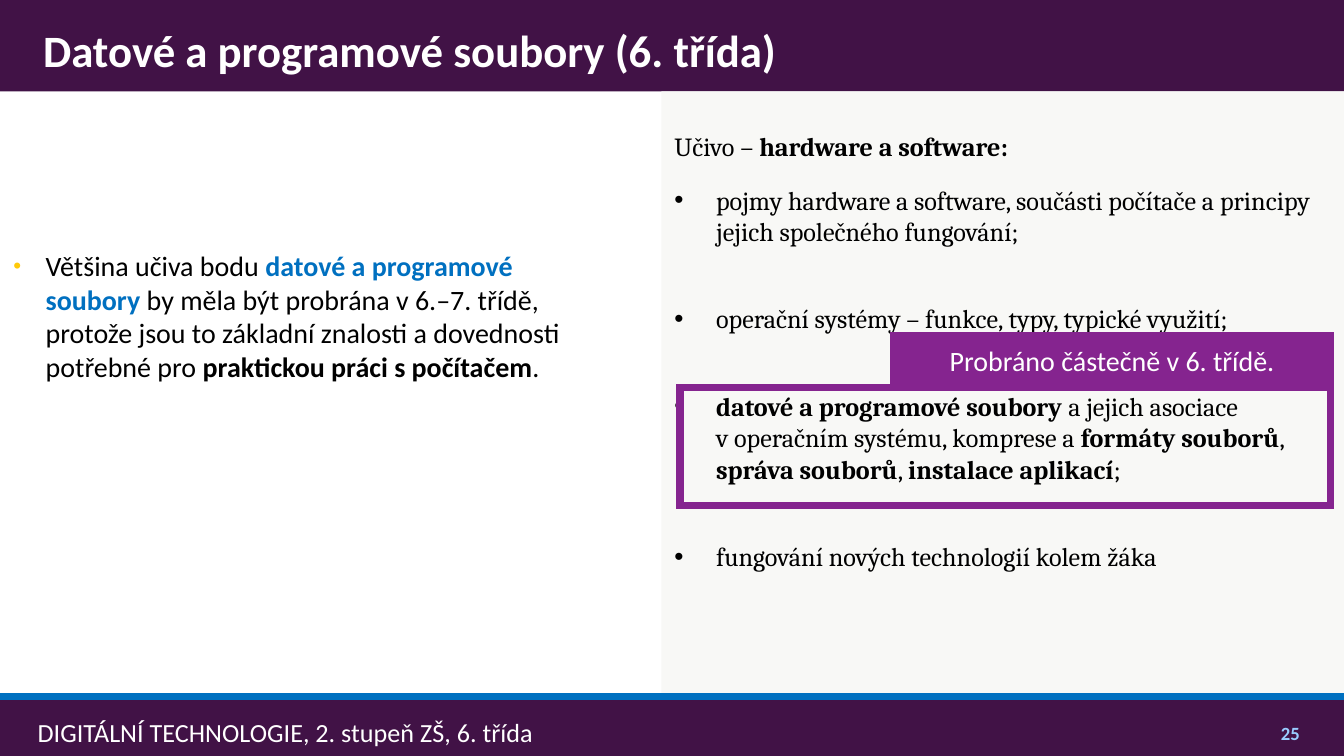
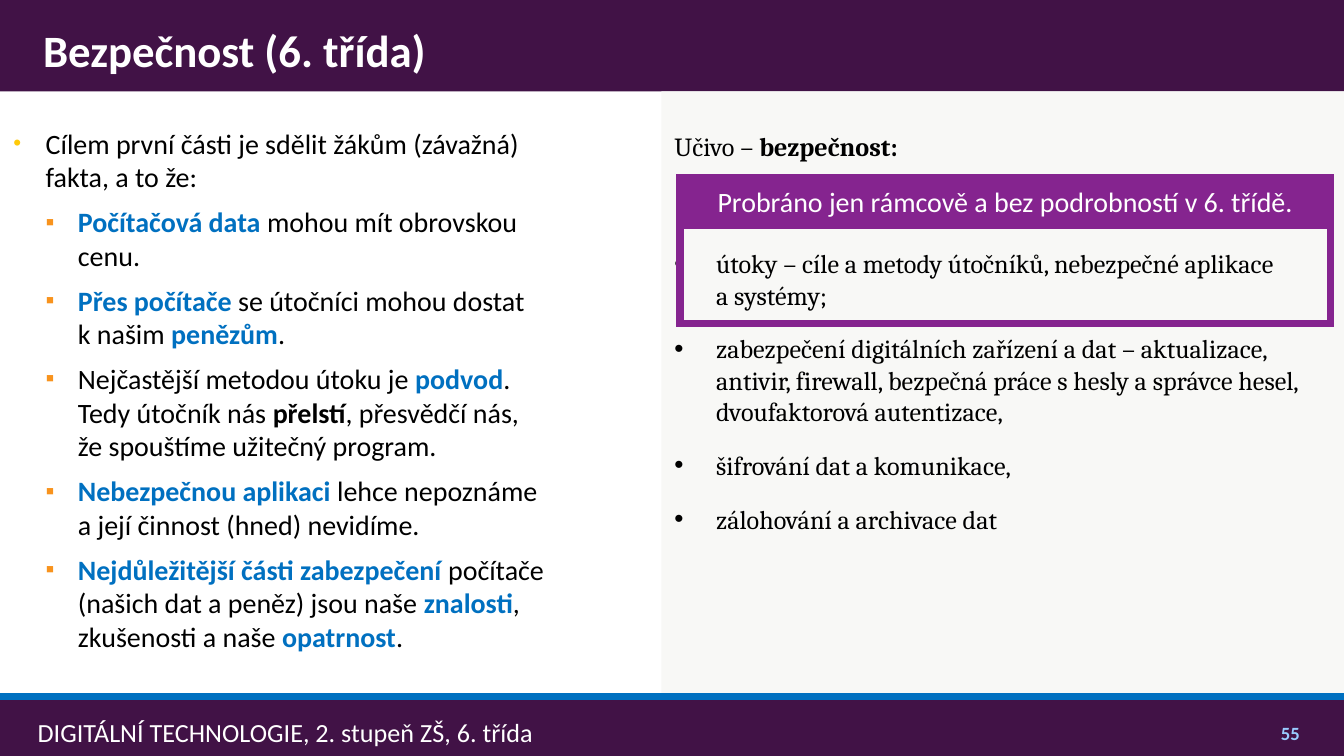
"""Build two lesson slides on files and security for 6th-grade digital technology."""
from lxml import etree
from pptx import Presentation
from pptx.dml.color import RGBColor
from pptx.enum import shapes, text
from pptx.oxml import ns
from pptx.util import Inches, Pt

COLORS = {
    "band": "411246", "panel": "F8F8F6", "accent": "85248F", "rule": "0070C0",
    "white": "FFFFFF", "black": "000000", "number": "99CCFF",
    "bullet": "FFCA08", "subbullet": "F8931D",
}
STYLES = {"plain": ("black", False), "bold": ("black", True), "key": ("rule", True)}
FOOTER = "DIGITÁLNÍ TECHNOLOGIE, 2. stupeň ZŠ, 6. třída"
LEVELS = [("•", "bullet", 80, 0.24), ("▪", "subbullet", 90, 0.48)]
TIE, HARD_SPACE = "~", chr(160)

SLIDES = [
    {
        "title": "Datové a programové soubory (6. třída)",
        "number": "25",
        "body_box": (0.04, 1.75, 4.49, 3.34),
        "body": [
            (0, [("Většina učiva bodu ", "plain"),
                 ("datové a programové soubory ", "key"),
                 ("by měla být probrána v 6.–7. třídě, protože jsou to základní "
                  "znalosti a dovednosti potřebné pro ", "plain"),
                 ("praktickou práci s~počítačem", "bold"), (".", "plain")]),
        ],
        "topic": "hardware a software:",
        "curriculum": [
            (12, [("pojmy hardware a software, součásti počítače a principy "
                   "jejich společného fungování;", "plain")]),
            (30, [("operační systémy – funkce, typy, typické využití;", "plain")]),
            (30, [("datové a programové soubory ", "bold"),
                  ("a jejich asociace v~operačním systému, komprese a ", "plain"),
                  ("formáty souborů", "bold"), (", ", "plain"),
                  ("správa souborů", "bold"), (", ", "plain"),
                  ("instalace aplikací", "bold"), (";", "plain")]),
            (30, [("fungování nových technologií kolem žáka", "plain")]),
        ],
        "frame": (2.88, 0.88),
        "label": ("Probráno částečně v 6. třídě.", 2.5, 3.25),
    },
    {
        "title": "Bezpečnost (6. třída)",
        "number": "55",
        "body_box": (0.04, 0.84, 4.25, 4.25),
        "body": [
            (0, [("Cílem první části je sdělit žákům (závažná) fakta, a to že:", "plain")]),
            (1, [("Počítačová data", "key"), (" mohou mít obrovskou cenu.", "plain")]),
            (1, [("Přes počítače ", "key"),
                 ("se útočníci mohou dostat k~našim ", "plain"),
                 ("penězům", "key"), (".", "plain")]),
            (1, [("Nejčastější metodou útoku je ", "plain"), ("podvod", "key"),
                 (". Tedy útočník nás ", "plain"), ("přelstí", "bold"),
                 (", přesvědčí nás, že~spouštíme užitečný program.", "plain")]),
            (1, [("Nebezpečnou aplikaci ", "key"),
                 ("lehce nepoznáme a~její činnost (hned) nevidíme.", "plain")]),
            (1, [("Nejdůležitější části zabezpečení ", "key"),
                 ("počítače (našich dat a peněz) jsou naše ", "plain"),
                 ("znalosti", "key"), (", zkušenosti a~naše ", "plain"),
                 ("opatrnost", "key"), (".", "plain")]),
        ],
        "topic": "bezpečnost:",
        "curriculum": [
            (46, [("útoky – cíle a metody útočníků, nebezpečné aplikace a~systémy;", "plain")]),
            (12, [("zabezpečení digitálních zařízení a dat – aktualizace, antivir, "
                   "firewall, bezpečná práce s hesly a správce hesel, "
                   "dvoufaktorová autentizace,", "plain")]),
            (12, [("šifrování dat a komunikace,", "plain")]),
            (12, [("zálohování a archivace dat", "plain")]),
        ],
        "frame": (1.67, 0.74),
        "label": ("Probráno jen rámcově a bez podrobností v 6. třídě.", 1.32, 4.84),
    },
]


def rgb(name):
    return RGBColor.from_string(COLORS[name])


def style_font(font, name, size, color, bold=False):
    font.name, font.size, font.bold = name, Pt(size), bold
    font.color.rgb = rgb(color)


def place(sp, box):
    sp.left, sp.top, sp.width, sp.height = map(Inches, box)


def frame_text(sp, insets, anchor=text.MSO_ANCHOR.TOP):
    tf = sp.text_frame
    tf.word_wrap, tf.auto_size = True, text.MSO_AUTO_SIZE.NONE
    tf.vertical_anchor = anchor
    tf.margin_left, tf.margin_top, tf.margin_right, tf.margin_bottom = map(Inches, insets)
    return tf


def write_line(tf, words, size, color, align, bold=False):
    tf.text = words
    p = tf.paragraphs[0]
    p.alignment = align
    style_font(p.runs[0].font, "Calibri", size, color, bold)


def write_runs(p, runs, font, size):
    for words, style in runs:
        r = p.add_run()
        r.text = words.replace(TIE, HARD_SPACE)
        style_font(r.font, font, size, *STYLES[style])


def add_bullet(p, char, indent, hang, color=None, percent=100):
    pPr = p._p.get_or_add_pPr()
    pPr.set("marL", str(Inches(indent)))
    pPr.set("indent", str(-Inches(hang)))
    if color:
        clr = etree.SubElement(pPr, ns.qn("a:buClr"))
        etree.SubElement(clr, ns.qn("a:srgbClr"), val=COLORS[color])
    etree.SubElement(pPr, ns.qn("a:buSzPct"), val=str(percent * 1000))
    etree.SubElement(pPr, ns.qn("a:buFont"), typeface="Arial")
    etree.SubElement(pPr, ns.qn("a:buChar"), char=char)


def add_rect(s, box, fill=None, line=None):
    sp = s.shapes.add_shape(shapes.MSO_SHAPE.RECTANGLE, *map(Inches, box))
    sp.shadow.inherit = False
    if fill:
        sp.fill.solid()
        sp.fill.fore_color.rgb = rgb(fill)
    else:
        sp.fill.background()
    if line:
        sp.line.color.rgb, sp.line.width = rgb(line), Pt(3.8)
        ln = sp.element.spPr.find(ns.qn("a:ln"))
        etree.SubElement(ln, ns.qn("a:miter"), lim="800000")
    else:
        sp.line.fill.background()
    return sp


def add_common(s, title, number):
    add_rect(s, (0, 5.19, 10, 0.44), "band")
    add_rect(s, (0, 0, 10, 0.68), "band")

    sp = s.shapes.title
    sp.element.getparent().append(sp.element)
    place(sp, (0.22, 0.06, 9.56, 0.62))
    tf = frame_text(sp, (0.1, 0.05, 0.05, 0.05), text.MSO_ANCHOR.MIDDLE)
    write_line(tf, title, 24, "white", text.PP_ALIGN.LEFT, True)

    sp = s.shapes.add_textbox(*map(Inches, (0.22, 5.27, 8.62, 0.36)))
    tf = frame_text(sp, (0.06, 0.05, 0.03, 0.05), text.MSO_ANCHOR.MIDDLE)
    write_line(tf, FOOTER, 14, "white", text.PP_ALIGN.LEFT)

    sp = s.shapes.add_textbox(*map(Inches, (8.97, 5.31, 0.8, 0.23)))
    tf = frame_text(sp, (0.1, 0.05, 0.1, 0), text.MSO_ANCHOR.BOTTOM)
    write_line(tf, number, 10, "number", text.PP_ALIGN.RIGHT, True)


def add_rule(s):
    line = s.shapes.add_connector(
        shapes.MSO_CONNECTOR.STRAIGHT, *map(Inches, (0, 5.18, 10, 5.18)))
    line.line.color.rgb, line.line.width = rgb("rule"), Pt(3.8)
    etree.SubElement(line.element.spPr, ns.qn("a:effectLst"))


def fill_body(sp, box, items):
    place(sp, box)
    tf = frame_text(sp, (0.06, 0.1, 0.1, 0.05))
    for i, (level, runs) in enumerate(items):
        p = tf.add_paragraph() if i else tf.paragraphs[0]
        char, color, percent, indent = LEVELS[level]
        add_bullet(p, char, indent, 0.24, color, percent)
        p.level, p.space_before = level, Pt(6 if i else 0)
        write_runs(p, runs, "Calibri", 15)


def add_curriculum(s, topic, items):
    sp = add_rect(s, (4.92, 0.68, 5.08, 4.5), "panel")
    tf = frame_text(sp, (0.1, 0.29, 0.1, 0.05))
    p = tf.paragraphs[0]
    p.alignment = text.PP_ALIGN.LEFT
    write_runs(p, [("Učivo – ", "plain"), (topic, "bold")], "Cambria", 14)
    for gap, runs in items:
        p = tf.add_paragraph()
        add_bullet(p, "•", 0.31, 0.31)
        p.alignment, p.space_before = text.PP_ALIGN.LEFT, Pt(gap)
        write_runs(p, runs, "Cambria", 14)


def add_highlight(s, frame, label):
    right, frame_width = 9.9, 4.84
    top, height = frame
    add_rect(s, (right - frame_width, top, frame_width, height), line="accent")
    words, top, width = label
    sp = add_rect(s, (right - width, top, width, 0.36), "accent", "accent")
    tf = frame_text(sp, (0.1, 0.05, 0.1, 0.05), text.MSO_ANCHOR.MIDDLE)
    write_line(tf, words, 15, "white", text.PP_ALIGN.CENTER)


def main():
    prs = Presentation()
    prs.slide_width = Inches(10)
    prs.slide_height = prs.slide_width * 9 // 16
    for data in SLIDES:
        s = prs.slides.add_slide(prs.slide_layouts[1])
        add_common(s, data["title"], data["number"])
        fill_body(s.placeholders[1], data["body_box"], data["body"])
        add_curriculum(s, data["topic"], data["curriculum"])
        add_highlight(s, data["frame"], data["label"])
        add_rule(s)
    prs.save("out.pptx")


if __name__ == "__main__":
    main()
